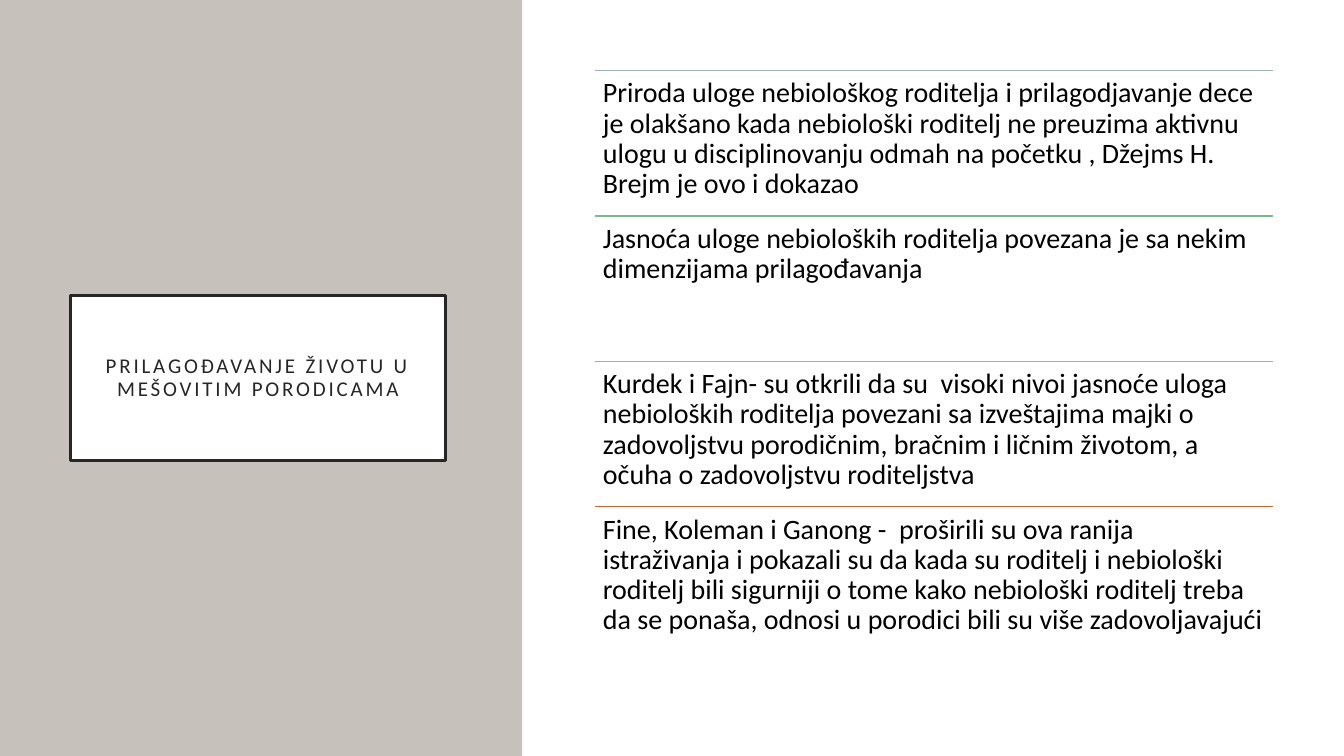
from dataclasses import dataclass

from pptx import Presentation
from pptx.dml.color import RGBColor as Color
from pptx.enum.shapes import MSO_CONNECTOR as Connector, MSO_SHAPE as Preset
from pptx.enum.text import MSO_ANCHOR as Anchor, MSO_AUTO_SIZE as AutoSize, PP_ALIGN as Align
from pptx.oxml.ns import qn
from pptx.util import Inches, Pt
from lxml.etree import SubElement


@dataclass(frozen=True)
class Theme:
    """Colours, font and type sizes of the slide."""
    font: str = "Calibri"
    title_size: float = 15
    body_size: float = 20
    title_spacing: int = 200
    panel: str = "C6C1BA"
    paper: str = "FFFFFF"
    ink: str = "262626"
    body: str = "000000"


@dataclass(frozen=True)
class Box:
    """A rectangle in inches."""
    left: float
    top: float
    width: float
    height: float

    def lengths(self):
        """Return left, top, width and height as slide lengths."""
        return [Inches(side) for side in (self.left, self.top, self.width, self.height)]


THEME = Theme()
TITLE = "PRILAGOĐAVANJE ŽIVOTU U MEŠOVITIM PORODICAMA"
FINDINGS = [
    ("9BAFB5", "Priroda uloge nebiološkog roditelja i prilagodjavanje dece je olakšano "
               "kada nebiološki roditelj ne preuzima aktivnu ulogu u disciplinovanju "
               "odmah na početku , Džejms H. Brejm je ovo i dokazao"),
    ("7BB88C", "Jasnoća uloge nebioloških roditelja povezana je sa nekim dimenzijama "
               "prilagođavanja"),
    ("9FC057", "Kurdek i Fajn- su otkrili da su  visoki nivoi jasnoće uloga nebioloških "
               "roditelja povezani sa izveštajima majki o zadovoljstvu porodičnim, "
               "bračnim i ličnim životom, a očuha o zadovoljstvu roditeljstva"),
    ("C96731", "Fine, Koleman i Ganong -  proširili su ova ranija istraživanja i "
               "pokazali su da kada su roditelj i nebiološki roditelj bili sigurniji o "
               "tome kako nebiološki roditelj treba da se ponaša, odnosi u porodici bili "
               "su više zadovoljavajući"),
]


def set_frame(frame, inset, anchor):
    """Set wrapping, equal margins and vertical anchor of a text frame."""
    frame.word_wrap = True
    frame.auto_size = AutoSize.NONE
    frame.vertical_anchor = anchor
    frame.margin_left = frame.margin_right = Inches(inset)
    frame.margin_top = frame.margin_bottom = Inches(inset)


def add_span(para, text, size, color):
    """Add one formatted run to a paragraph and return it."""
    span = para.add_run()
    span.text = text
    span.font.name = THEME.font
    span.font.size = Pt(size)
    span.font.bold = False
    span.font.color.rgb = Color.from_string(color)
    return span


def add_title_panel(page, box, title_box):
    """Fill the left panel and set the framed title on it."""
    panel = page.shapes.add_shape(Preset.RECTANGLE, *box.lengths())
    panel.shadow.inherit = False
    panel.fill.solid()
    panel.fill.fore_color.rgb = Color.from_string(THEME.panel)
    panel.line.fill.background()

    title = page.shapes.title
    title.element.addprevious(panel.element)
    title.left, title.top, title.width, title.height = title_box.lengths()
    title.fill.solid()
    title.fill.fore_color.rgb = Color.from_string(THEME.paper)
    title.line.color.rgb = Color.from_string(THEME.ink)
    title.line.width = Pt(2.5)
    set_frame(title.text_frame, 0.2, Anchor.MIDDLE)
    para = title.text_frame.paragraphs[0]
    para.alignment = Align.CENTER
    para.line_spacing = 0.9
    span = add_span(para, TITLE, THEME.title_size, THEME.ink)
    span.font._element.set("spc", str(THEME.title_spacing))


def add_finding(page, box, color, text):
    """Draw one coloured rule with its statement below."""
    left, top, width, height = box.lengths()
    rule = page.shapes.add_connector(Connector.STRAIGHT, left, top, left + width, top)
    rule.line.color.rgb = Color.from_string(color)
    rule.line.width = Pt(1)
    SubElement(rule.element.spPr, qn("a:effectLst"))

    statement = page.shapes.add_textbox(left, top, width, height)
    set_frame(statement.text_frame, 0.08, Anchor.TOP)
    para = statement.text_frame.paragraphs[0]
    para.alignment = Align.LEFT
    para.line_spacing = 0.9
    add_span(para, text, THEME.body_size, THEME.body)


def add_findings(page, box):
    """Stack the findings in equal rows within the box."""
    row = box.height / len(FINDINGS)
    for index, (color, text) in enumerate(FINDINGS):
        add_finding(page, Box(box.left, box.top + index * row, box.width, row), color, text)


def main():
    """Build and save the slide."""
    deck = Presentation()
    deck.slide_width, deck.slide_height = Inches(13.33), Inches(7.5)
    page = deck.slides.add_slide(deck.slide_layouts[5])
    page.background.fill.solid()
    page.background.fill.fore_color.rgb = Color.from_string(THEME.paper)
    add_title_panel(page, Box(0, 0, 5.18, 7.5), Box(0.7, 2.93, 3.72, 1.64))
    add_findings(page, Box(5.9, 0.7, 6.73, 5.77))
    deck.save("out.pptx")


if __name__ == "__main__":
    main()
